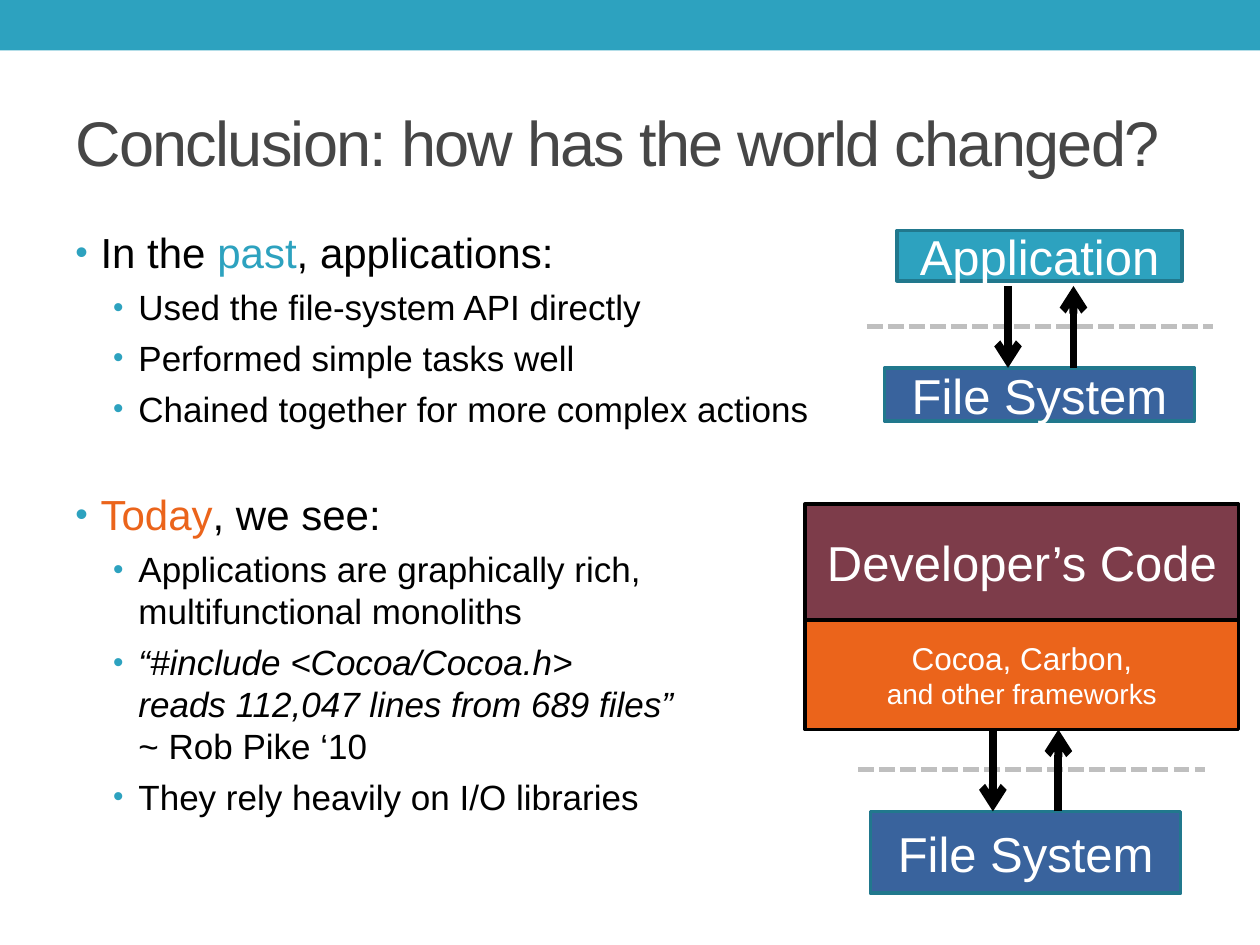
from lxml import etree
from pptx import Presentation
from pptx import util as u
from pptx.dml.color import RGBColor
from pptx.enum import dml, shapes, text
from pptx.oxml import ns

TEAL, ORANGE, BLUE, MAROON = "2DA2BF", "EB641B", "39639D", "7D3C4A"
BLACK, WHITE, GRAY, DARK_GRAY, DARK_TEAL = "000000", "FFFFFF", "BFBFBF", "464646", "21788D"

# Each item: level, space before, spans of (words, colour, italic)
BODY = [
    (0, 5, [("In the ", BLACK, False), ("past", TEAL, False), (", applications:", BLACK, False)]),
    (1, 5, [("Used the file-system API directly", BLACK, False)]),
    (1, 5, [("Performed simple tasks well", BLACK, False)]),
    (1, 5, [("Chained together for more complex actions", BLACK, False)]),
    (0, 34, [("Today", ORANGE, False), (", we see:", BLACK, False)]),
    (1, 5, [("Applications are graphically rich,\nmultifunctional monoliths", BLACK, False)]),
    (1, 5, [("“#include <Cocoa/Cocoa.h>\nreads 112,047 lines from 689 files”\n", BLACK, True),
            ("~ Rob Pike ‘10", BLACK, False)]),
    (1, 5, [("They rely heavily on I/O libraries", BLACK, False)]),
]


def color(value):
    """Turn a hex string into a colour."""
    return RGBColor.from_string(value)


def add_element(parent, tag, **attributes):
    """Append a drawing element with the given attributes."""
    return etree.SubElement(parent, ns.qn(tag), **attributes)


def style(span, size, value, italic=False):
    """Format one run of text."""
    span.font.name = "Arial"
    span.font.size = u.Pt(size)
    span.font.italic = italic
    span.font.color.rgb = color(value)


def add_bar(page):
    """Draw the band along the top edge."""
    bar = page.shapes.add_shape(shapes.MSO_SHAPE.RECTANGLE, 0, 0, u.Inches(10), u.Inches(0.4))
    bar.shadow.inherit = False
    bar.fill.solid()
    bar.fill.fore_color.rgb = color(TEAL)
    bar.line.fill.background()


def set_title(page, words):
    """Place and format the title."""
    title = page.shapes.title
    title.left, title.top, title.width, title.height = map(u.Inches, (0.5, 0.58, 9, 1.08))
    frame = title.text_frame
    frame.text = words
    frame.vertical_anchor = text.MSO_ANCHOR.MIDDLE
    para = frame.paragraphs[0]
    para.alignment = text.PP_ALIGN.LEFT
    span = para.runs[0]
    style(span, 36, DARK_GRAY)
    span.font._element.set("spc", "-100")


def add_bullet(para, level):
    """Give a paragraph its indent and bullet."""
    props = para._p.get_or_add_pPr()
    props.set("marL", str(u.Inches((0.2, 0.5)[level])))
    props.set("indent", str(u.Inches(-0.2)))
    add_element(add_element(props, "a:buClr"), "a:srgbClr", val=TEAL)
    add_element(props, "a:buSzPct", val="85000")
    add_element(props, "a:buFont", typeface="Arial")
    add_element(props, "a:buChar", char="•")


def add_body(page):
    """Write the bulleted list."""
    box = page.shapes.add_textbox(*map(u.Inches, (0.5, 1.75, 6.08, 5.58)))
    frame = box.text_frame
    frame.word_wrap = True
    for index, (level, gap, spans) in enumerate(BODY):
        para = frame.add_paragraph() if index else frame.paragraphs[0]
        para.level = level
        add_bullet(para, level)
        para.space_before = u.Pt(gap)
        for words, value, italic in spans:
            for number, line in enumerate(words.split("\n")):
                if number:
                    para.add_line_break()
                if line:
                    span = para.add_run()
                    span.text = line
                    style(span, (24, 20)[level], value, italic)


def add_block(page, place, fill, outline, lines):
    """Draw a labelled rectangle; lines pair words with a size."""
    block = page.shapes.add_shape(shapes.MSO_SHAPE.RECTANGLE, *map(u.Inches, place))
    block.shadow.inherit = False
    block.fill.solid()
    block.fill.fore_color.rgb = color(fill)
    block.line.color.rgb = color(outline)
    block.line.width = u.Pt(2.08)
    frame = block.text_frame
    frame.vertical_anchor = text.MSO_ANCHOR.MIDDLE
    frame.text = "\n".join(words for words, _ in lines)
    for para, (_, size) in zip(frame.paragraphs, lines):
        para.alignment = text.PP_ALIGN.CENTER
        style(para.runs[0], size, WHITE)


def add_line(page, start, end, value, width):
    """Draw a straight line without a shadow."""
    line = page.shapes.add_connector(shapes.MSO_CONNECTOR.STRAIGHT, *map(u.Inches, start + end))
    line.line.color.rgb = color(value)
    line.line.width = u.Pt(width)
    add_element(line._element.spPr, "a:effectLst")
    return line


def add_divider(page, left, top):
    """Draw the dashed boundary between two layers."""
    divider = add_line(page, (left, top), (left + 2.75, top), GRAY, 3)
    divider.line.dash_style = dml.MSO_LINE.SQUARE_DOT


def add_arrow(page, start, end):
    """Draw a heavy arrow."""
    arrow = add_line(page, start, end, BLACK, 4.5)
    add_element(arrow.line._get_or_add_ln(), "a:tailEnd", type="arrow")


def add_exchange(page, left, top):
    """Draw a down arrow and an up arrow side by side."""
    bottom, right = top + 0.65, left + 0.52
    add_arrow(page, (left, top), (left, bottom))
    add_arrow(page, (right, bottom), (right, top))


def add_past(page):
    """Draw the application directly above the file system."""
    add_divider(page, 6.88, 2.59)
    add_block(page, (7.02, 2.92, 2.46, 0.42), BLUE, DARK_TEAL, [("File System", 28)])
    add_exchange(page, 8, 2.27)
    add_block(page, (7.12, 1.83, 2.26, 0.4), TEAL, DARK_TEAL, [("Application", 28)])


def add_today(page):
    """Draw the code and frameworks above the file system."""
    add_divider(page, 6.81, 6.11)
    add_block(page, (6.39, 4.92, 3.44, 0.87), ORANGE, BLACK,
              [("Cocoa, Carbon,", 18), ("and other frameworks", 16)])
    add_block(page, (6.91, 6.44, 2.46, 0.65), BLUE, DARK_TEAL, [("File System", 28)])
    add_exchange(page, 7.88, 5.79)
    add_block(page, (6.39, 4, 3.44, 0.92), MAROON, BLACK, [("Developer’s Code", 28)])


def main():
    """Build and save the deck."""
    deck = Presentation()
    deck.slide_width, deck.slide_height = u.Inches(10), u.Inches(7.5)
    page = deck.slides.add_slide(deck.slide_layouts[5])
    add_bar(page)
    set_title(page, "Conclusion: how has the world changed?")
    add_body(page)
    add_today(page)
    add_past(page)
    deck.save("out.pptx")


if __name__ == "__main__":
    main()
